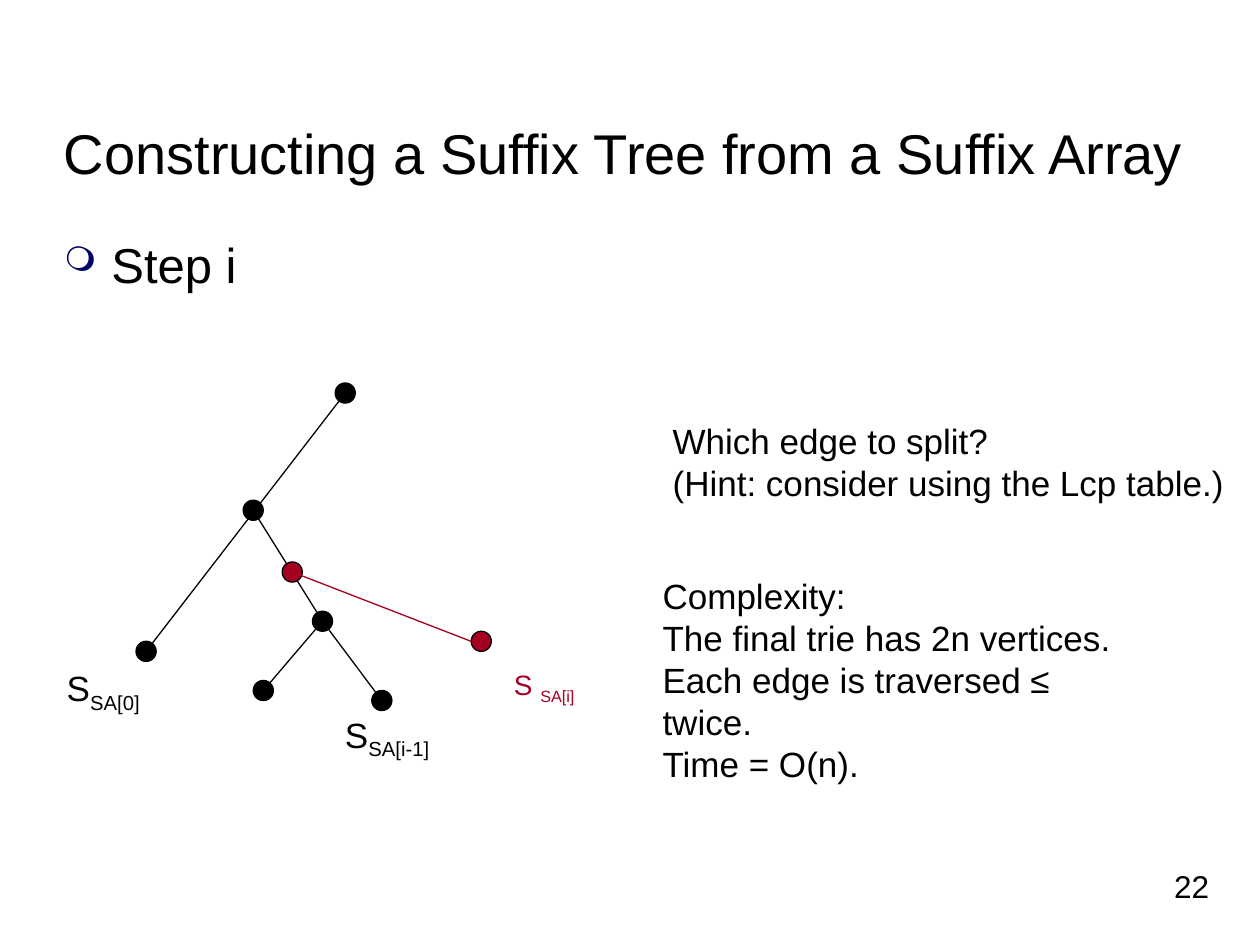
import pptx
import pptx.dml.color
import pptx.enum.shapes
import pptx.enum.text
import pptx.oxml.ns
import pptx.util
from lxml import etree

Pt = pptx.util.Pt
PP = pptx.enum.text.PP_ALIGN
COLORS = {"black": "000000", "red": "A50021", "bullet": "000066"}
FONT = "Arial"
NODE_SIZE = 11.5
LINE_WIDTH = 0.75
TIGHT = {"margin_left": Pt(6.5), "margin_right": Pt(6.5),
         "margin_top": Pt(3), "margin_bottom": Pt(3)}

# Node centres in points
TREE = {
    "root": (197.3, 224.6),
    "branch": (144.7, 291.6),
    "first leaf": (83.5, 372.2),
    "lower branch": (184.3, 355),
    "inner leaf": (150.5, 394.6),
    "last leaf": (218.2, 400.3),
}
EDGES = [("root", "first leaf"), ("branch", "lower branch"),
         ("lower branch", "inner leaf"), ("lower branch", "last leaf")]
SPLIT, NEW_LEAF = (167, 326.9), (275, 366.5)


def rgb(name):
    return pptx.dml.color.RGBColor.from_string(COLORS[name])


def set_all(obj, values):
    for name, value in values.items():
        setattr(obj, name, value)


def add_text(s, box, lines, size, color="black", frame=None, para=None):
    """Each line is a list of (text, is_subscript) runs; returns the paragraphs."""
    tf = s.shapes.add_textbox(*map(Pt, box)).text_frame
    set_all(tf, {"word_wrap": True, **(frame or {})})
    for i, line in enumerate(lines):
        p = tf.add_paragraph() if i else tf.paragraphs[0]
        set_all(p, para or {})
        for text, subscript in line:
            r = p.add_run()
            r.text = text
            set_all(r.font, {"name": FONT, "size": Pt(size)})
            r.font.color.rgb = rgb(color)
            if subscript:
                r.font._element.set("baseline", "-25000")
    return tf.paragraphs


def plain(*lines):
    return [[(line, False)] for line in lines]


def add_bullet(p, char, color, percent, indent):
    ns = pptx.oxml.ns.qn
    pPr = p._p.get_or_add_pPr()
    pPr.set("marL", str(Pt(indent)))
    pPr.set("indent", str(-Pt(indent)))
    clr = etree.SubElement(pPr, ns("a:buClr"))
    etree.SubElement(clr, ns("a:srgbClr"), val=COLORS[color])
    etree.SubElement(pPr, ns("a:buSzPct"), val=str(percent * 1000))
    etree.SubElement(pPr, ns("a:buChar"), char=char)


def add_edge(s, start, end, color="black"):
    line = s.shapes.add_connector(pptx.enum.shapes.MSO_CONNECTOR.STRAIGHT,
                                  *map(Pt, start + end))
    line.line.color.rgb = rgb(color)
    line.line.width = Pt(LINE_WIDTH)
    etree.SubElement(line._element.spPr, pptx.oxml.ns.qn("a:effectLst"))


def add_node(s, center, color="black"):
    left, top = (c - NODE_SIZE / 2 for c in center)
    sp = s.shapes.add_shape(pptx.enum.shapes.MSO_SHAPE.OVAL,
                            *map(Pt, (left, top, NODE_SIZE, NODE_SIZE)))
    sp.shadow.inherit = False
    sp.fill.solid()
    sp.fill.fore_color.rgb = rgb(color)
    sp.line.color.rgb = rgb("black")
    sp.line.width = Pt(LINE_WIDTH)


def add_suffix_label(s, box, base, index, size=20, color="black"):
    add_text(s, box, [[(base, False), (index, True)]], size, color)


def add_tree(s):
    for start, end in EDGES:
        add_edge(s, TREE[start], TREE[end])
    for center in TREE.values():
        add_node(s, center)
    for center in (SPLIT, NEW_LEAF):
        add_node(s, center, "red")
    add_edge(s, SPLIT, (NEW_LEAF[0] - NODE_SIZE / 2, NEW_LEAF[1]), "red")
    add_suffix_label(s, (31, 377.3, 60, 31), "S", "SA[0]")
    add_suffix_label(s, (190, 404, 67, 31), "S", "SA[i-1]")
    add_suffix_label(s, (286.6, 378, 57, 50), "S ", "SA[i]", 16, "red")


def main():
    prs = pptx.Presentation()
    prs.slide_width, prs.slide_height = Pt(720), Pt(540)
    s = prs.slides.add_slide(prs.slide_layouts[6])

    add_text(s, (16.6, 50.4, 679.7, 78.5),
             plain("Constructing a Suffix Tree from a Suffix Array"), 32,
             frame={**TIGHT, "vertical_anchor": pptx.enum.text.MSO_ANCHOR.MIDDLE},
             para={"alignment": PP.CENTER, "line_spacing": 0.85})
    step = add_text(s, (30.2, 136, 653, 370), plain("Step i"), 28,
                    frame=TIGHT, para={"line_spacing": 0.85})[0]
    add_bullet(step, "❍", "bullet", 70, 27)

    add_tree(s)
    add_text(s, (377.3, 236.2, 332, 55.4),
             plain("Which edge to split?",
                   "(Hint: consider using the Lcp table.)"), 20)
    add_text(s, (371.5, 324.7, 284, 103),
             plain("Complexity:", "The final trie has 2n vertices.",
                   "Each edge is traversed ≤ twice.", "Time = O(n)."), 20)
    add_text(s, (663.8, 491.8, 46, 37.4), plain("22"), 18)

    prs.save("out.pptx")


if __name__ == "__main__":
    main()
